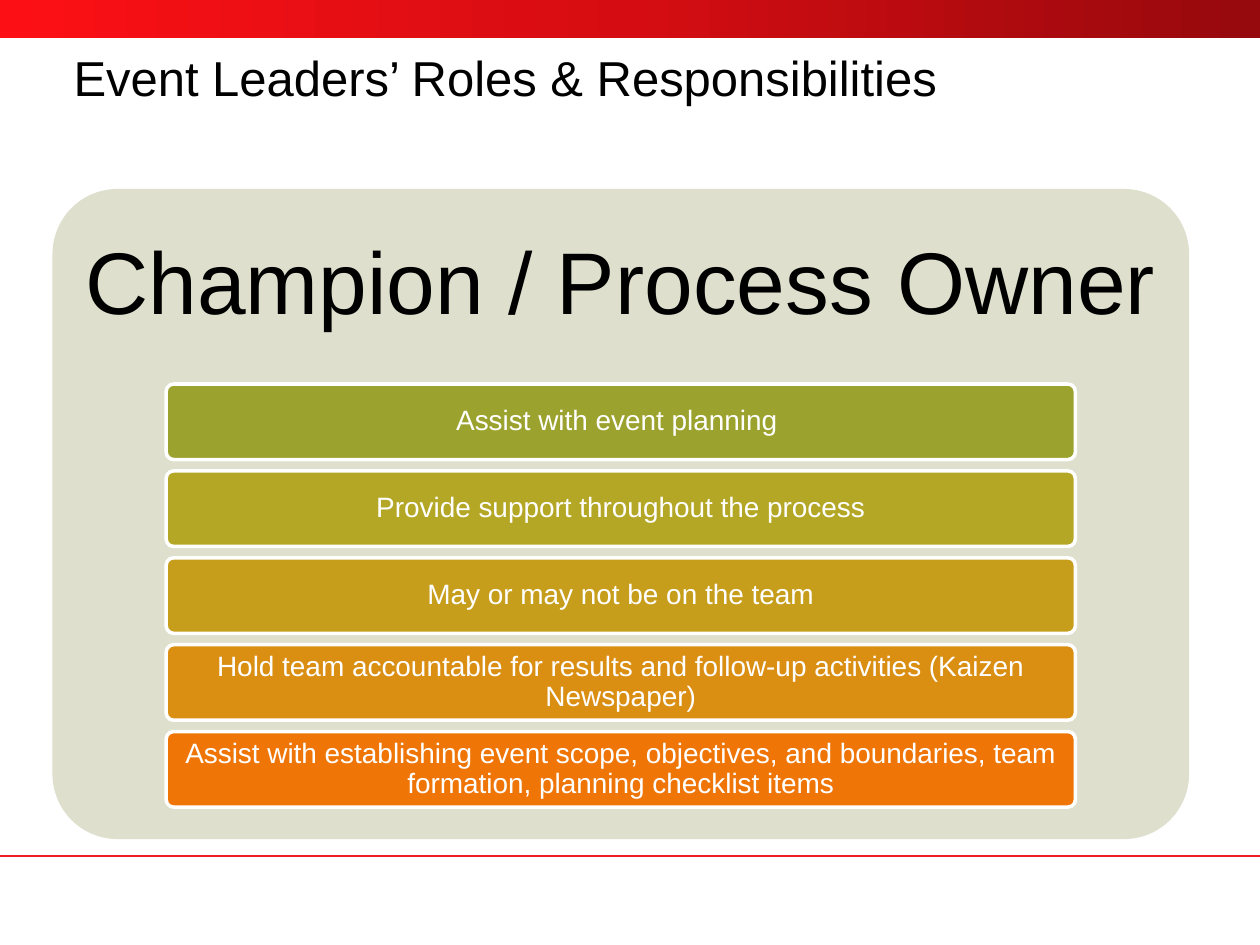
from copy import deepcopy

from lxml import etree
from pptx import Presentation
from pptx.dml.color import RGBColor
from pptx.enum import shapes, text
from pptx.oxml import ns
from pptx.util import Pt

COLORS = {
    "black": "000000", "white": "FFFFFF", "panel": "DEE0CD", "rule": "ED1F24",
    "dark_red": "96090D", "mid_red": "D50D12", "bright_red": "FC1015",
    "olive": "9CA22E", "moss": "B4A726", "gold": "C79E1C",
    "amber": "DA8E12", "orange": "EF7507",
}

DUTIES = [
    ("Assist with event planning ", "olive"),
    ("Provide support throughout the process", "moss"),
    ("May or may not be on the team", "gold"),
    ("Hold team accountable for results and follow-up activities "
     "(Kaizen Newspaper)", "amber"),
    ("Assist with establishing event scope, objectives, and boundaries, "
     "team formation, planning checklist items", "orange"),
]


def rgb(name):
    return RGBColor.from_string(COLORS[name])


def write(sp, words, size, color="black", align=text.PP_ALIGN.CENTER,
          anchor=text.MSO_ANCHOR.MIDDLE, inset=(0, 0)):
    """Put one formatted paragraph in a shape; inset is (sides, top and bottom)."""
    tf = sp.text_frame
    tf.word_wrap = True
    tf.auto_size = text.MSO_AUTO_SIZE.NONE
    tf.vertical_anchor = anchor
    tf.margin_left = tf.margin_right = Pt(inset[0])
    tf.margin_top = tf.margin_bottom = Pt(inset[1])
    p = tf.paragraphs[0]
    p.alignment = align
    p.line_spacing = 0.9
    r = p.add_run()
    r.text = words
    r.font.name = "Arial"
    r.font.size = Pt(size)
    r.font.color.rgb = rgb(color)


def add_box(s, kind, left, top, width, height):
    sp = s.shapes.add_shape(kind, Pt(left), Pt(top), Pt(width), Pt(height))
    sp.shadow.inherit = False
    sp.line.fill.background()
    return sp


def add_round_box(s, left, top, width, height, color):
    sp = add_box(s, shapes.MSO_SHAPE.ROUNDED_RECTANGLE, left, top, width, height)
    sp.adjustments[0] = 0.1
    sp.fill.solid()
    sp.fill.fore_color.rgb = rgb(color)
    return sp


def add_banner(s, left, top, width, height):
    sp = add_box(s, shapes.MSO_SHAPE.RECTANGLE, left, top, width, height)
    sp.fill.gradient()
    sp.fill.gradient_angle = 180
    # A new gradient has two stops; the third is inserted in the middle
    first = sp._element.spPr.find(".//" + ns.qn("a:gs"))
    first.addnext(deepcopy(first))
    stops = zip(sp.fill.gradient_stops, ("dark_red", "mid_red", "bright_red"))
    for i, (stop, color) in enumerate(stops):
        stop.position = i / 2
        stop.color.rgb = rgb(color)


def add_rule(s, left, top, width):
    line = s.shapes.add_connector(shapes.MSO_CONNECTOR.STRAIGHT,
                                  Pt(left), Pt(top), Pt(left + width), Pt(top))
    line.line.color.rgb = rgb("rule")
    line.line.width = Pt(1)
    etree.SubElement(line._element.spPr, ns.qn("a:effectLst"))


def add_title(s, left, top, width, height):
    sp = s.shapes.title
    sp.left, sp.top, sp.width, sp.height = map(Pt, (left, top, width, height))
    write(sp, "Event Leaders’ Roles & Responsibilities", 28,
          align=text.PP_ALIGN.LEFT, anchor=text.MSO_ANCHOR.TOP)


def add_role_panel(s, left, top, width, height):
    add_round_box(s, left, top, width, height, "panel")

    # Heading fills the top 30% of the panel
    head_height = 0.3 * height
    sp = s.shapes.add_textbox(Pt(left), Pt(top), Pt(width), Pt(head_height))
    write(sp, "Champion / Process Owner", 50, inset=(15, 15))

    # Duty bars are centred at 80% of the panel width
    bar_height, pitch = 43.2, 49.65
    for i, (duty, color) in enumerate(DUTIES):
        sp = add_round_box(s, left + 0.1 * width, top + head_height + i * pitch,
                           0.8 * width, bar_height, color)
        sp.line.color.rgb = rgb("white")
        sp.line.width = Pt(2)
        write(sp, duty, 16, color="white", inset=(3, 2))


def main():
    prs = Presentation()
    prs.slide_width, prs.slide_height = Pt(720), Pt(540)
    s = prs.slides.add_slide(prs.slide_layouts[5])
    add_banner(s, 0, 0, 720, 22)
    add_rule(s, 0, 489, 720)
    add_title(s, 42, 31, 570, 66)
    add_role_panel(s, 30, 108, 649.5, 371.5)
    prs.save("out.pptx")


if __name__ == "__main__":
    main()
